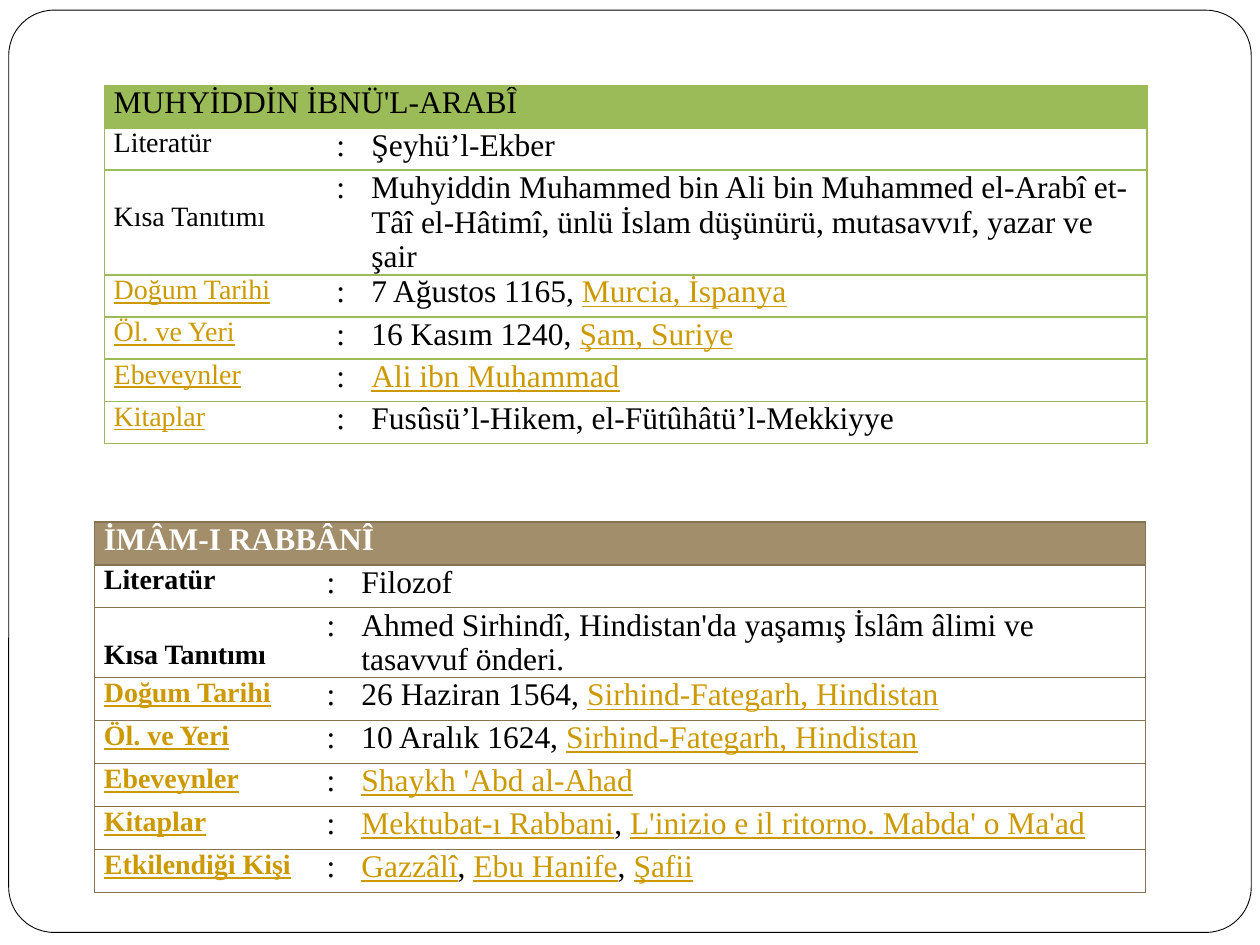
from dataclasses import dataclass

from lxml import etree
from pptx import Presentation
from pptx.dml.color import RGBColor
from pptx.enum.shapes import MSO_SHAPE
from pptx.oxml.ns import qn
from pptx.util import Pt

ROUNDED = MSO_SHAPE.ROUNDED_RECTANGLE


@dataclass(frozen=True)
class Theme:
    font: str = "Times New Roman"
    text: str = "000000"
    paper: str = "FFFFFF"
    link: str = "CC9900"
    green: str = "9BBB59"
    tan: str = "A28E6A"
    brown: str = "847253"
    label_size: float = 16
    value_size: float = 18
    inset: float = 5.4


@dataclass(frozen=True)
class Span:
    text: str
    link: bool = False


@dataclass(frozen=True)
class Row:
    label: Span
    values: tuple[Span, ...]
    height_factor: float = 1
    label_drop: float = 0


@dataclass(frozen=True)
class Card:
    title: str
    left: float
    top: float
    columns: tuple[float, ...]
    row_height: float
    fill: str
    border: str
    border_width: float
    title_color: str
    bold: bool
    rows: tuple[Row, ...]


THEME = Theme()


def link(text: str) -> Span:
    return Span(text, True)


def rgb(color: str) -> RGBColor:
    return RGBColor.from_string(color)


def add_text(p, text: str, *, size: float, color: str = THEME.text,
             bold: bool = False, underline: bool = False) -> None:
    r = p.add_run()
    r.text = text
    r.font.name = THEME.font
    r.font.size = Pt(size)
    r.font.bold = bold
    r.font.underline = underline
    r.font.color.rgb = rgb(color)


def add_spans(cell, spans: tuple[Span, ...], size: float, bold: bool = False) -> None:
    for span in spans:
        add_text(cell.text_frame.paragraphs[0], span.text, size=size, bold=bold,
                 color=THEME.link if span.link else THEME.text, underline=span.link)


def set_borders(cell, sides: str, color: str, width: float) -> None:
    """Draw the named sides (from L, R, T, B) and clear the others."""
    tcPr = cell._tc.get_or_add_tcPr()
    for side in "LRTB":
        ln = etree.SubElement(tcPr, qn(f"a:ln{side}"), w=str(int(Pt(width))))
        if side in sides:
            fill = etree.SubElement(ln, qn("a:solidFill"))
            etree.SubElement(fill, qn("a:srgbClr"), val=color)
        else:
            etree.SubElement(ln, qn("a:noFill"))


def add_card(s, card: Card) -> None:
    heights = [card.row_height] + [card.row_height * row.height_factor for row in card.rows]
    table = s.shapes.add_table(len(heights), len(card.columns), Pt(card.left), Pt(card.top),
                               Pt(sum(card.columns)), Pt(sum(heights))).table
    table.first_row = table.horz_banding = False
    for column, width in zip(table.columns, card.columns):
        column.width = Pt(width)

    # Grid: horizontal rules and an outer frame, no inner verticals
    for i, height in enumerate(heights):
        table.rows[i].height = Pt(height)
        for cell, sides in zip(table.rows[i].cells, ("LTB", "TB", "RTB")):
            cell.margin_left = cell.margin_right = Pt(THEME.inset)
            cell.margin_top = cell.margin_bottom = 0
            set_borders(cell, "LRTB" if i == 0 else sides, card.border, card.border_width)
            if i == 0:
                cell.fill.solid()
                cell.fill.fore_color.rgb = rgb(card.fill)
            else:
                cell.fill.background()

    # Heading
    title = table.cell(0, 0)
    title.merge(table.cell(0, len(card.columns) - 1))
    add_text(title.text_frame.paragraphs[0], card.title, size=THEME.value_size,
             color=card.title_color, bold=card.bold)

    # Label, colon, value
    for i, row in enumerate(card.rows, 1):
        label, colon, value = table.rows[i].cells
        label.margin_top = Pt(row.label_drop)
        add_spans(label, (row.label,), THEME.label_size, card.bold)
        add_spans(colon, (Span(":"),), THEME.value_size)
        add_spans(value, row.values, THEME.value_size)


def add_frame(s) -> None:
    sp = s.shapes.add_shape(ROUNDED, Pt(5), Pt(5.8), Pt(710), Pt(527))
    sp.adjustments[0] = 0.049
    sp.shadow.inherit = False
    sp.fill.solid()
    sp.fill.fore_color.rgb = rgb(THEME.paper)
    sp.line.color.rgb = rgb(THEME.text)
    sp.line.width = Pt(0.5)


CARDS = (
    Card("MUHYİDDİN İBNÜ'L-ARABÎ", 59.6, 49, (127.2, 20, 448.6), 24.1,
         THEME.green, THEME.green, 1, THEME.text, False, (
             Row(Span("Literatür"), (Span("Şeyhü’l-Ekber"),)),
             Row(Span("Kısa Tanıtımı"),
                 (Span("Muhyiddin Muhammed bin Ali bin Muhammed el-Arabî et-Tâî el-Hâtimî, "
                       "ünlü İslam düşünürü, mutasavvıf, yazar ve şair"),), 2, 18),
             Row(link("Doğum Tarihi"), (Span("7 Ağustos 1165, "), link("Murcia, İspanya"))),
             Row(link("Öl. ve Yeri"), (Span("16 Kasım 1240, "), link("Şam, Suriye"))),
             Row(link("Ebeveynler"), (link("Ali ibn Muḥammad"),)),
             Row(link("Kitaplar"), (Span("Fusûsü’l-Hikem, el-Fütûhâtü’l-Mekkiyye"),)),
         )),
    Card("İMÂM-I RABBÂNÎ", 54, 298.3, (127.2, 20, 453.6), 24.55,
         THEME.tan, THEME.brown, 0.75, THEME.paper, True, (
             Row(Span("Literatür"), (Span("Filozof"),)),
             Row(Span("Kısa Tanıtımı"),
                 (Span("Ahmed Sirhindî, Hindistan'da yaşamış İslâm âlimi ve "
                       "tasavvuf önderi. "),), 1, 18),
             Row(link("Doğum Tarihi"),
                 (Span("26 Haziran 1564, "), link("Sirhind-Fategarh, Hindistan"))),
             Row(link("Öl. ve Yeri"),
                 (Span("10 Aralık 1624, "), link("Sirhind-Fategarh, Hindistan"))),
             Row(link("Ebeveynler"), (link("Shaykh 'Abd al-Ahad"),)),
             Row(link("Kitaplar"), (link("Mektubat-ı Rabbani"), Span(", "),
                                    link("L'inizio e il ritorno. Mabda' o Ma'ad"))),
             Row(link("Etkilendiği Kişi"), (link("Gazzâlî"), Span(", "), link("Ebu Hanife"),
                                            Span(", "), link("Şafii"))),
         )),
)


def main() -> None:
    prs = Presentation()
    prs.slide_width, prs.slide_height = Pt(720), Pt(540)
    s = prs.slides.add_slide(prs.slide_layouts[6])
    add_frame(s)
    for card in CARDS:
        add_card(s, card)
    prs.save("out.pptx")


if __name__ == "__main__":
    main()
